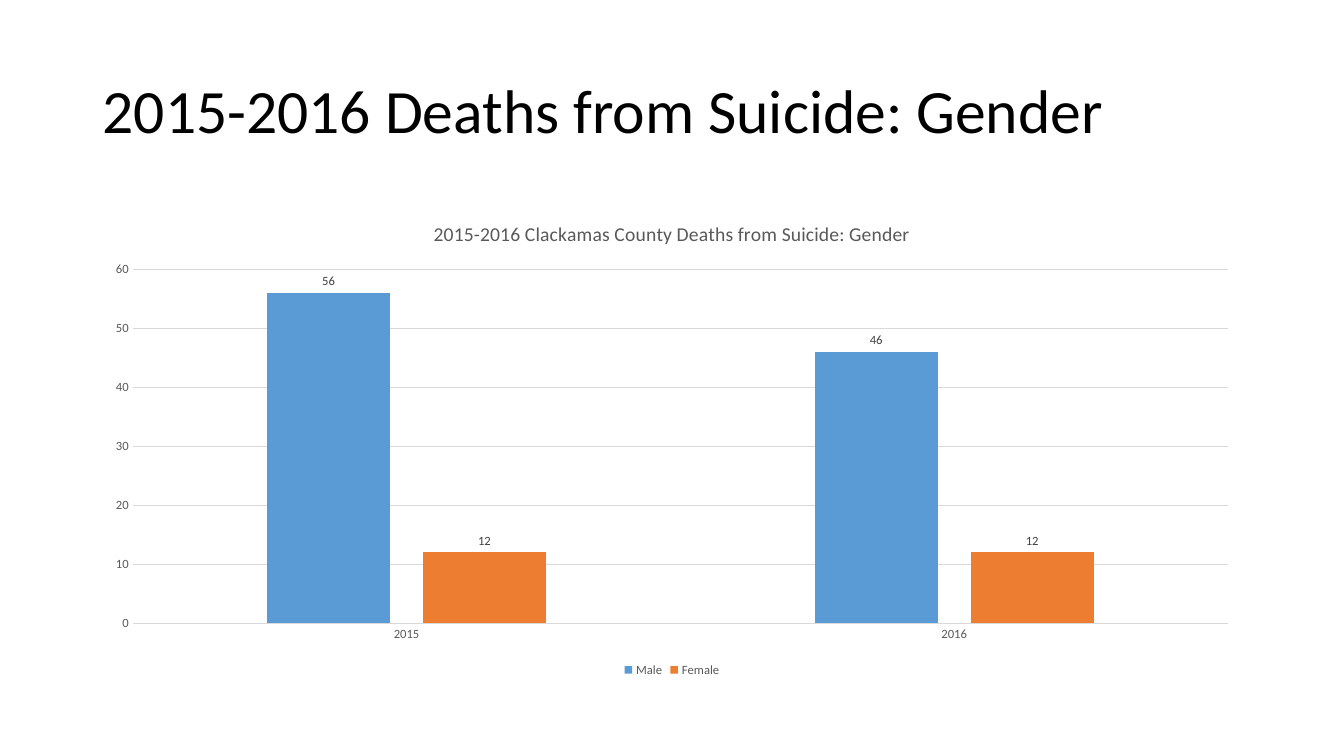
"""Build a slide with a clustered column chart of deaths by gender."""
from pptx import Presentation
from pptx.chart.data import CategoryChartData
from pptx.dml.color import RGBColor
from pptx.enum.chart import XL_CHART_TYPE, XL_LABEL_POSITION, XL_LEGEND_POSITION, XL_TICK_MARK
from pptx.enum.text import MSO_ANCHOR
from pptx.util import Inches, Pt

WIDTH, HEIGHT = 13.33, 7.5
HEADING = "2015-2016 Deaths from Suicide: Gender"
CHART_TITLE = "2015-2016 Clackamas County Deaths from Suicide: Gender"
YEARS = ["2015", "2016"]
GENDERS = [("Male", (56, 46), "5B9BD5"), ("Female", (12, 12), "ED7D31")]
FONT = "Calibri"
GRAY, GRID, DARK, BLACK = "595959", "D9D9D9", "404040", "000000"
MARGIN = 0.92
HEADING_TOP, HEADING_HEIGHT = 0.4, 1.45
CHART_TOP, CHART_HEIGHT = 2, 4.76


def color(value):
    return RGBColor.from_string(value)


def assign(target, values):
    for name, value in values.items():
        setattr(target, name, value)


def style_font(font, size, tone):
    assign(font, {"name": FONT, "size": Pt(size), "bold": False})
    font.color.rgb = color(tone)


def style_line(line):
    line.width = Pt(0.75)
    line.color.rgb = color(GRID)


def place(top, height):
    return [Inches(length) for length in (MARGIN, top, WIDTH - 2 * MARGIN, height)]


def add_heading(page):
    frame = page.shapes.add_textbox(*place(HEADING_TOP, HEADING_HEIGHT)).text_frame
    assign(frame, {"word_wrap": True, "vertical_anchor": MSO_ANCHOR.MIDDLE})
    para = frame.paragraphs[0]
    para.line_spacing = 0.9
    span = para.add_run()
    span.text = HEADING
    style_font(span.font, 44, BLACK)


def add_gender_chart(page):
    data = CategoryChartData()
    data.categories = YEARS
    for name, values, _ in GENDERS:
        data.add_series(name, values)
    chart = page.shapes.add_chart(
        XL_CHART_TYPE.COLUMN_CLUSTERED, *place(CHART_TOP, CHART_HEIGHT), data).chart
    style_font(chart.font, 10, BLACK)
    assign(chart, {"has_title": True, "has_legend": True})
    title = chart.chart_title.text_frame
    title.text = CHART_TITLE
    style_font(title.paragraphs[0].runs[0].font, 14, GRAY)
    assign(chart.legend, {"position": XL_LEGEND_POSITION.BOTTOM, "include_in_layout": False})
    style_font(chart.legend.font, 9, GRAY)

    years, deaths = chart.category_axis, chart.value_axis
    for axis in (years, deaths):
        assign(axis, {"major_tick_mark": XL_TICK_MARK.NONE, "minor_tick_mark": XL_TICK_MARK.NONE})
        style_font(axis.tick_labels.font, 9, GRAY)
    style_line(years.format.line)
    style_line(deaths.major_gridlines.format.line)
    deaths.format.line.fill.background()
    assign(deaths, {"minimum_scale": 0, "maximum_scale": 60, "major_unit": 10})

    plot = chart.plots[0]
    assign(plot, {"gap_width": 219, "overlap": -27, "vary_by_categories": False})
    for series, (_, _, tone) in zip(plot.series, GENDERS):
        series.format.fill.solid()
        series.format.fill.fore_color.rgb = color(tone)
        assign(series.data_labels, {"show_value": True, "position": XL_LABEL_POSITION.OUTSIDE_END})
        style_font(series.data_labels.font, 9, DARK)


def main():
    deck = Presentation()
    assign(deck, {"slide_width": Inches(WIDTH), "slide_height": Inches(HEIGHT)})
    page = deck.slides.add_slide(deck.slide_layouts[6])
    add_heading(page)
    add_gender_chart(page)
    deck.save("out.pptx")


if __name__ == "__main__":
    main()
